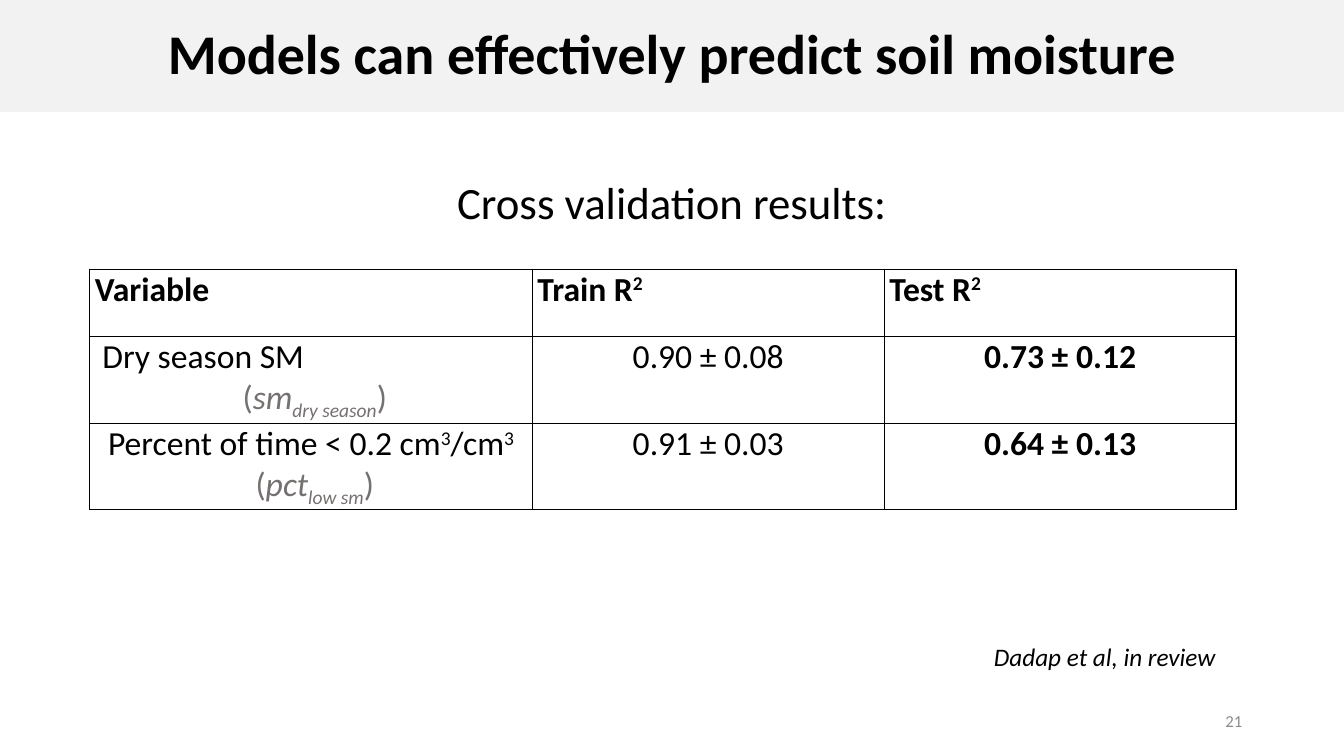
from dataclasses import dataclass

from lxml import etree
from pptx import Presentation
from pptx import util as u
from pptx.dml import color
from pptx.enum import shapes, text
from pptx.oxml import ns

BLACK, GREY = "000000", "767171"
LEFT, CENTER, RIGHT = text.PP_ALIGN.LEFT, text.PP_ALIGN.CENTER, text.PP_ALIGN.RIGHT
SUPER, SUB = 30000, -25000


@dataclass
class Run:
    text: str
    bold: bool = False
    italic: bool = False
    color: str = BLACK
    baseline: int = 0


@dataclass
class Para:
    runs: list[Run]
    align: text.PP_ALIGN = CENTER
    spacing: float = 1.0


@dataclass
class Box:
    at: tuple[float, float, float, float]
    para: Para
    size: float
    fill: str | None = None
    line: str | None = None
    anchor: text.MSO_ANCHOR = text.MSO_ANCHOR.MIDDLE


def rgb(value: str) -> color.RGBColor:
    return color.RGBColor.from_string(value)


def write(tf, paras: list[Para], size: float) -> None:
    for i, para in enumerate(paras):
        p = tf.add_paragraph() if i else tf.paragraphs[0]
        p.alignment, p.line_spacing = para.align, para.spacing
        for run in para.runs:
            r = p.add_run()
            r.text = run.text
            fmt = {"name": "Calibri", "size": u.Pt(size), "bold": run.bold, "italic": run.italic}
            for name, value in fmt.items():
                setattr(r.font, name, value)
            r.font.color.rgb = rgb(run.color)
            if run.baseline:
                r._r.get_or_add_rPr().set("baseline", str(run.baseline))


def add_box(s, box: Box) -> None:
    at = [u.Inches(v) for v in box.at]
    if box.fill:
        sp = s.shapes.add_shape(shapes.MSO_SHAPE.RECTANGLE, *at)
        sp.shadow.inherit = False
        sp.fill.solid()
        sp.fill.fore_color.rgb = rgb(box.fill)
        if box.line:
            sp.line.color.rgb = rgb(box.line)
            sp.line.width = u.Pt(1)
        else:
            sp.line.fill.background()
    else:
        sp = s.shapes.add_textbox(*at)
    tf = sp.text_frame
    tf.word_wrap, tf.vertical_anchor = True, box.anchor
    write(tf, [box.para], box.size)


def add_borders(cell) -> None:
    tc_pr = cell._tc.get_or_add_tcPr()
    for i, side in enumerate(("a:lnL", "a:lnR", "a:lnT", "a:lnB")):
        ln = etree.Element(ns.qn(side), w=str(u.Pt(1)))
        fill = etree.SubElement(ln, ns.qn("a:solidFill"))
        etree.SubElement(fill, ns.qn("a:srgbClr"), val=BLACK)
        tc_pr.insert(i, ln)


def add_results(s, rows: list[list[list[Para]]]) -> None:
    widths, heights = (4.39, 3.49, 3.49), (0.67, 0.8, 0.8)
    at = (0.89, 2.67, sum(widths), sum(heights))
    table = s.shapes.add_table(len(rows), len(widths), *[u.Inches(v) for v in at]).table
    table.first_row = table.horz_banding = False
    for col, width in zip(table.columns, widths):
        col.width = u.Inches(width)
    for row, height, contents in zip(table.rows, heights, rows):
        row.height = u.Inches(height)
        for cell, paras in zip(row.cells, contents):
            cell.margin_left = cell.margin_right = u.Inches(0.05)
            cell.margin_top = cell.margin_bottom = 0
            cell.fill.background()
            add_borders(cell)
            write(cell.text_frame, paras, 24)


def header(label: str, power: str = "") -> list[Para]:
    runs = [Run(label, bold=True)]
    if power:
        runs.append(Run(power, bold=True, baseline=SUPER))
    return [Para(runs, LEFT)]


def symbol(name: str, index: str) -> Para:
    return Para([Run(" (", color=GREY), Run(name, italic=True, color=GREY),
                 Run(index, italic=True, color=GREY, baseline=SUB), Run(")", color=GREY)])


def scores(train: str, test: str) -> list[list[Para]]:
    return [[Para([Run(train)])], [Para([Run(test, bold=True)])]]


RESULTS = [
    [header("Variable"), header("Train R", "2"), header("Test R", "2")],
    [[Para([Run(" Dry season SM")], LEFT), symbol("sm", "dry season")],
     *scores("0.90 ± 0.08", "0.73 ± 0.12")],
    [[Para([Run("Percent of time < 0.2 cm"), Run("3", baseline=SUPER),
            Run("/cm"), Run("3", baseline=SUPER)]), symbol("pct", "low sm")],
     *scores("0.91 ± 0.03", "0.64 ± 0.13")],
]

BOXES = [
    # Title band
    Box((0, 0, 13.33, 1.11),
        Para([Run("Models can effectively predict soil moisture", bold=True)], spacing=0.9),
        40, fill="F2F2F2"),
    # Slide number
    Box((9.42, 6.95, 3, 0.4), Para([Run("21", color="8C8C8C")], RIGHT), 12),
    # Table heading
    Box((4.35, 1.59, 4.63, 0.81), Para([Run("Cross validation results:")]),
        32, fill="FFFFFF", line="FFFFFF"),
    # Citation
    Box((9.76, 6.31, 3.4, 0.4), Para([Run("Dadap et al, in review", italic=True)], LEFT),
        18, anchor=text.MSO_ANCHOR.TOP),
]


def main() -> None:
    prs = Presentation()
    prs.slide_width, prs.slide_height = u.Inches(13.33), u.Inches(7.5)
    s = prs.slides.add_slide(prs.slide_layouts[6])
    add_results(s, RESULTS)
    for box in BOXES:
        add_box(s, box)
    prs.save("out.pptx")


if __name__ == "__main__":
    main()
